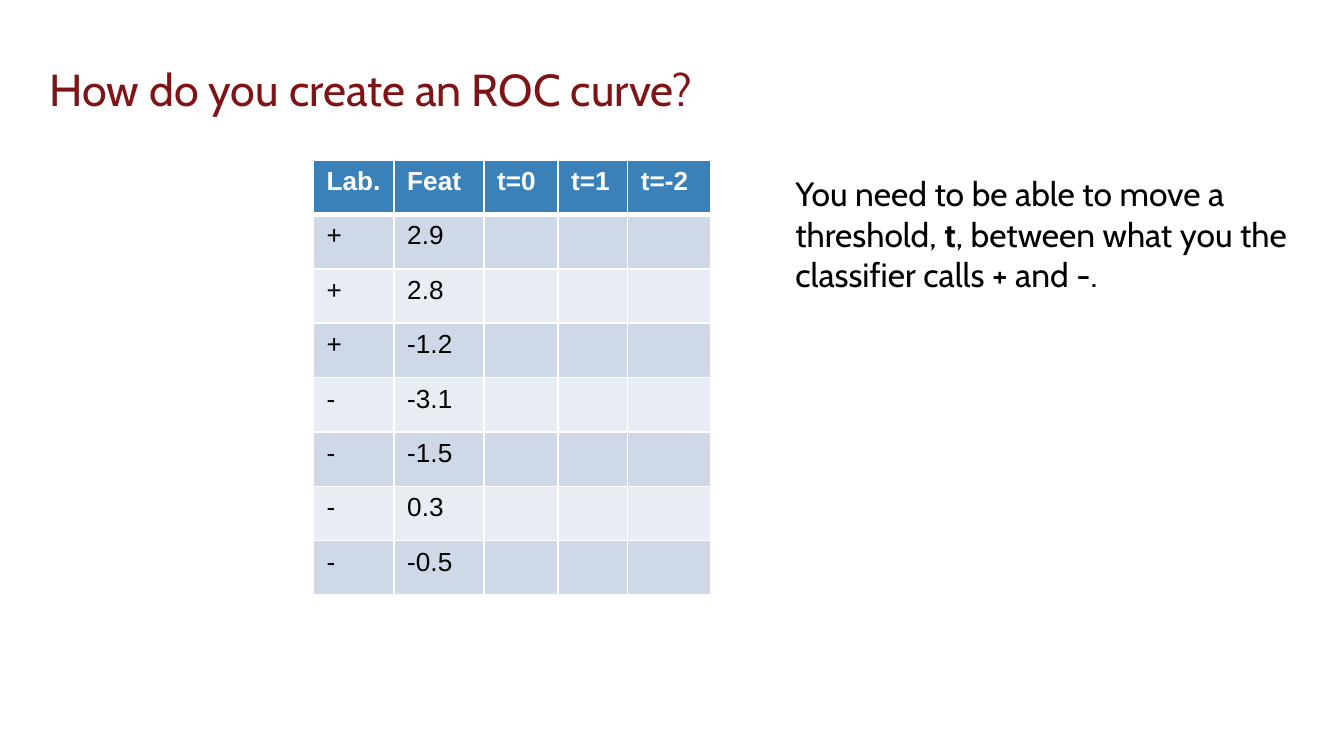
from lxml.etree import SubElement as Sub
from pptx import Presentation
from pptx.dml.color import RGBColor as Rgb
from pptx.enum.text import MSO_ANCHOR as Anchor
from pptx.oxml.ns import qn
from pptx.util import Inches, Pt

HUES = {"title": "7F1416", "text": "000000", "line": "FFFFFF",
        "head": "3A81BA", "odd": "CED8E7", "even": "E8EDF3"}
HEADS = ["Lab.", "Feat", "t=0", "t=1", "t=-2"]
DATA = [("+", "2.9"), ("+", "2.8"), ("+", "-1.2"), ("-", "-3.1"),
        ("-", "-1.5"), ("-", "0.3"), ("-", "-0.5")]
COLS = [0.6, 0.67, 0.55, 0.52, 0.62]
TALL = 3.24
TOP = 1.19
WIDE = 10


def style(run, hue, **form):
    for key, val in form.items():
        setattr(run.font, key, val)
    run.font.color.rgb = Rgb.from_string(HUES[hue])


def write(box, parts, hue, size, anchor):
    shape = slide.shapes.add_textbox(*map(Inches, box))
    frame = shape.text_frame
    form = {"word_wrap": True, "vertical_anchor": anchor}
    form.update({f"margin_{side}": Inches(0.1)
                 for side in ("left", "top", "right", "bottom")})
    for key, val in form.items():
        setattr(frame, key, val)
    for text, bold in parts:
        run = frame.paragraphs[0].add_run()
        run.text = text
        style(run, hue, name="Cabin", size=Pt(size), bold=bold)


deck = Presentation()
deck.slide_width, deck.slide_height = Inches(WIDE), Inches(WIDE * 9 / 16)
slide = deck.slides.add_slide(deck.slide_layouts[6])

write((0.27, 0.07, 9.44, 0.89), [("How do you create an ROC curve?", False)],
      "title", 24, Anchor.BOTTOM)
write((5.82, TOP, 3.9, 3.16),
      [("You need to be able to move a threshold, ", False), ("t", True),
       (", between what you the classifier calls + and -.", False)],
      "text", 18, Anchor.TOP)

rows = [HEADS] + [[*pair, "", "", ""] for pair in DATA]
grid = slide.shapes.add_table(len(rows), len(COLS), Inches(2.33), Inches(TOP),
                              Inches(sum(COLS)), Inches(TALL)).table
for col, width in zip(grid.columns, COLS):
    col.width = Inches(width)

for r, row in enumerate(rows):
    grid.rows[r].height = Inches(TALL / len(rows))
    band = "head" if r == 0 else "odd" if r % 2 else "even"
    for c, text in enumerate(row):
        cell = grid.cell(r, c)
        cell.margin_right = Inches(0.05)
        props = cell._tc.get_or_add_tcPr()
        for side in "LRTB":
            thick = (r == 0 and side == "B") or (r == 1 and side == "T")
            edge = Sub(props, qn(f"a:ln{side}"), w=str(Pt(3 if thick else 1)))
            Sub(Sub(edge, qn("a:solidFill")), qn("a:srgbClr"), val=HUES["line"])
        cell.fill.solid()
        cell.fill.fore_color.rgb = Rgb.from_string(HUES[band])
        para = cell.text_frame.paragraphs[0]
        para.font.size = Pt(14)
        if text:
            run = para.add_run()
            run.text = text
            style(run, "text" if r else "line", name="Arial", size=Pt(14),
                  bold=r == 0)

deck.save("out.pptx")
